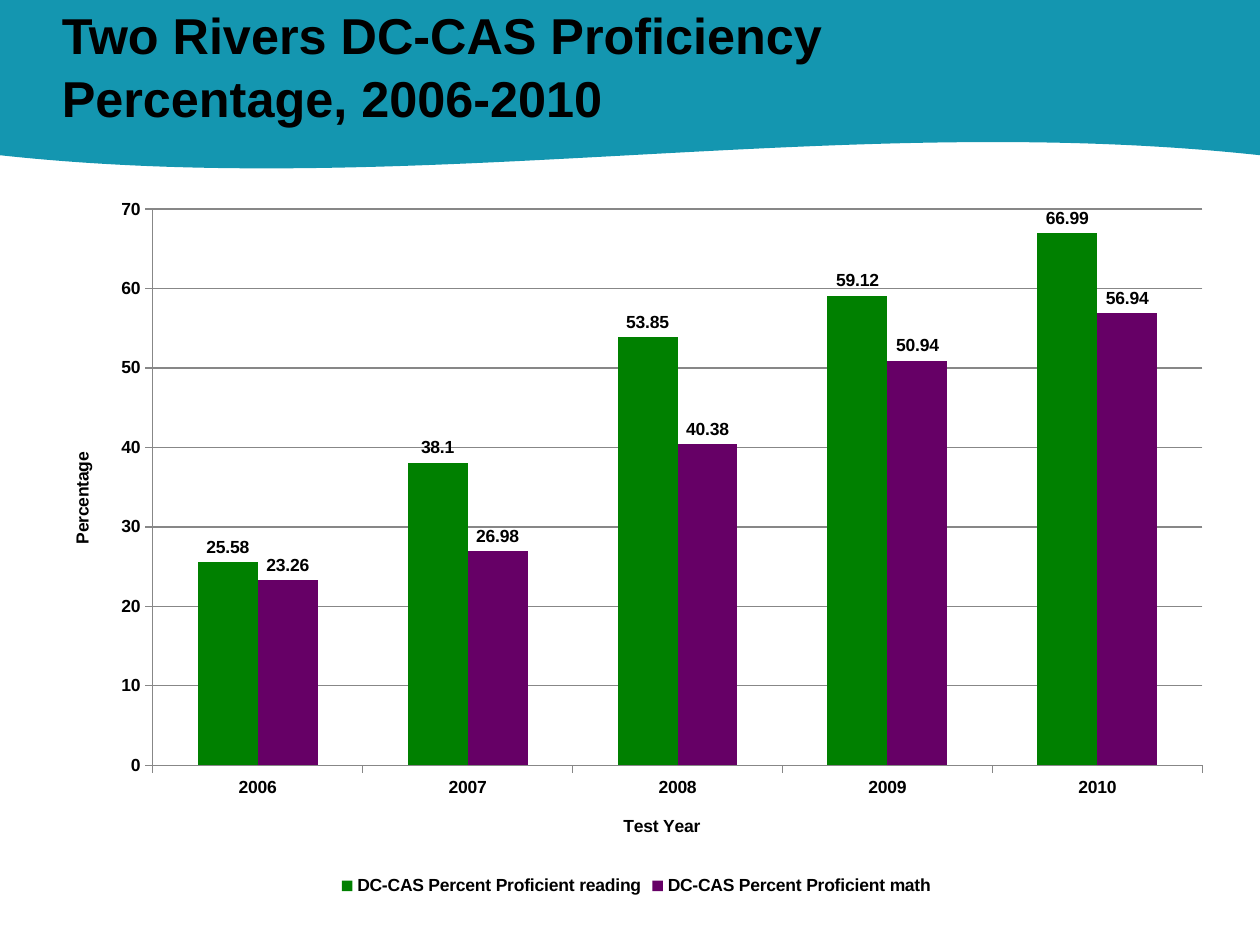
import pptx
import pptx.chart.data
import pptx.dml.color
import pptx.enum.chart
import pptx.enum.shapes
import pptx.enum.text
import pptx.oxml
import pptx.oxml.ns
import pptx.util

RGBColor = pptx.dml.color.RGBColor
TEAL = RGBColor(0x14, 0x96, 0xB0)
BLACK = RGBColor(0, 0, 0)
GREEN = RGBColor(0, 0x80, 0)
PURPLE = RGBColor(0x66, 0, 0x66)
GRAY = RGBColor(0x87, 0x87, 0x87)

presentation = pptx.Presentation()
presentation.slide_width = pptx.util.Inches(10)
presentation.slide_height = pptx.util.Inches(7.5)
slide = presentation.slides.add_slide(presentation.slide_layouts[5])


def box(left, top, width, height):
    return [pptx.util.Inches(length) for length in (left, top, width, height)]


def style_font(font, size):
    font.name = "Arial"
    font.size = pptx.util.Pt(size)
    font.bold = True
    font.color.rgb = BLACK


# Wave banner, mirrored and turned, behind the title
banner = slide.shapes.add_shape(pptx.enum.shapes.MSO_SHAPE.WAVE, *box(0, -0.33, 10, 1.67))
banner.adjustments[0] = 0.065
banner.adjustments[1] = 0
banner.rotation = 180
banner._element.spPr.xfrm.set("flipH", "1")
banner.shadow.inherit = False
banner.fill.solid()
banner.fill.fore_color.rgb = TEAL
banner.line.fill.background()
slide.shapes._spTree.insert(2, banner._element)

# Title
title = slide.shapes.title
title.left, title.top, title.width, title.height = box(0.39, 0.11, 8.17, 0.8)
frame = title.text_frame
frame.auto_size = pptx.enum.text.MSO_AUTO_SIZE.NONE
frame.word_wrap = True
frame.vertical_anchor = pptx.enum.text.MSO_ANCHOR.MIDDLE
frame.margin_left = frame.margin_right = pptx.util.Inches(0.1)
frame.margin_top = frame.margin_bottom = pptx.util.Inches(0.1)
paragraph = frame.paragraphs[0]
paragraph.alignment = pptx.enum.text.PP_ALIGN.LEFT
paragraph.line_spacing = 1.05
run = paragraph.add_run()
run.text = "Two Rivers DC-CAS Proficiency Percentage, 2006-2010"
style_font(run.font, 28.8)

# Proficiency chart
chart_data = pptx.chart.data.CategoryChartData()
chart_data.categories = [str(year) for year in range(2006, 2011)]
chart_data.add_series("DC-CAS Percent Proficient reading", [25.58, 38.1, 53.85, 59.12, 66.99])
chart_data.add_series("DC-CAS Percent Proficient math", [23.26, 26.98, 40.38, 50.94, 56.94])
chart = slide.shapes.add_chart(
    pptx.enum.chart.XL_CHART_TYPE.COLUMN_CLUSTERED, *box(0.37, 1.49, 9.36, 5.66), chart_data
).chart
chart.has_title = False
style_font(chart.font, 10)
chart.has_legend = True
chart.legend.position = pptx.enum.chart.XL_LEGEND_POSITION.BOTTOM
chart.legend.include_in_layout = False

# Columns and value labels
plot = chart.plots[0]
plot.gap_width = 150
plot.overlap = 0
plot.vary_by_categories = False
for series, color in zip(plot.series, (GREEN, PURPLE)):
    series.format.fill.solid()
    series.format.fill.fore_color.rgb = color
    labels = series.data_labels
    labels.show_value = True
    labels.position = pptx.enum.chart.XL_LABEL_POSITION.OUTSIDE_END
    style_font(labels.font, 10)

# Axes
for axis, name in ((chart.category_axis, "Test Year"), (chart.value_axis, "Percentage")):
    axis.major_tick_mark = pptx.enum.chart.XL_TICK_MARK.OUTSIDE
    axis.format.line.color.rgb = GRAY
    run = axis.axis_title.text_frame.paragraphs[0].add_run()
    run.text = name
    style_font(run.font, 10)
chart.value_axis.minimum_scale = 0
chart.value_axis.maximum_scale = 70
chart.value_axis.major_unit = 10
chart.value_axis.has_major_gridlines = True
chart.value_axis.major_gridlines.format.line.color.rgb = GRAY

# Plot area as shares of the chart frame
plot_area = plot._element.getparent()
for old_layout in plot_area.findall(pptx.oxml.ns.qn("c:layout")):
    plot_area.remove(old_layout)
shares = {"x": 0.09, "y": 0.03, "w": 0.89, "h": 0.78}
plot_area.insert(0, pptx.oxml.parse_xml(
    f"<c:layout {pptx.oxml.ns.nsdecls('c')}><c:manualLayout>"
    '<c:layoutTarget val="inner"/><c:xMode val="edge"/><c:yMode val="edge"/>'
    + "".join(f'<c:{side} val="{share}"/>' for side, share in shares.items())
    + "</c:manualLayout></c:layout>"
))

presentation.save("out.pptx")
